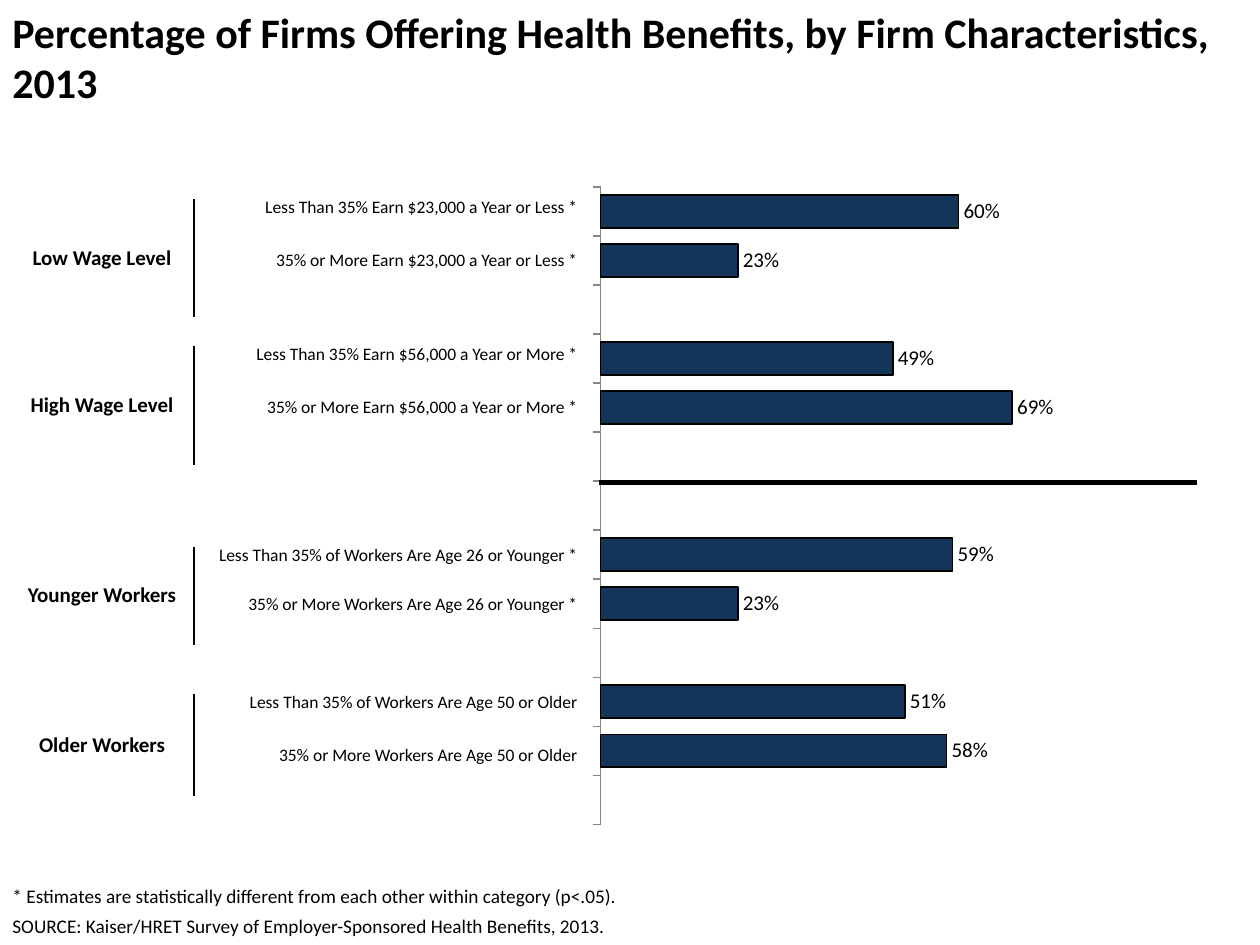
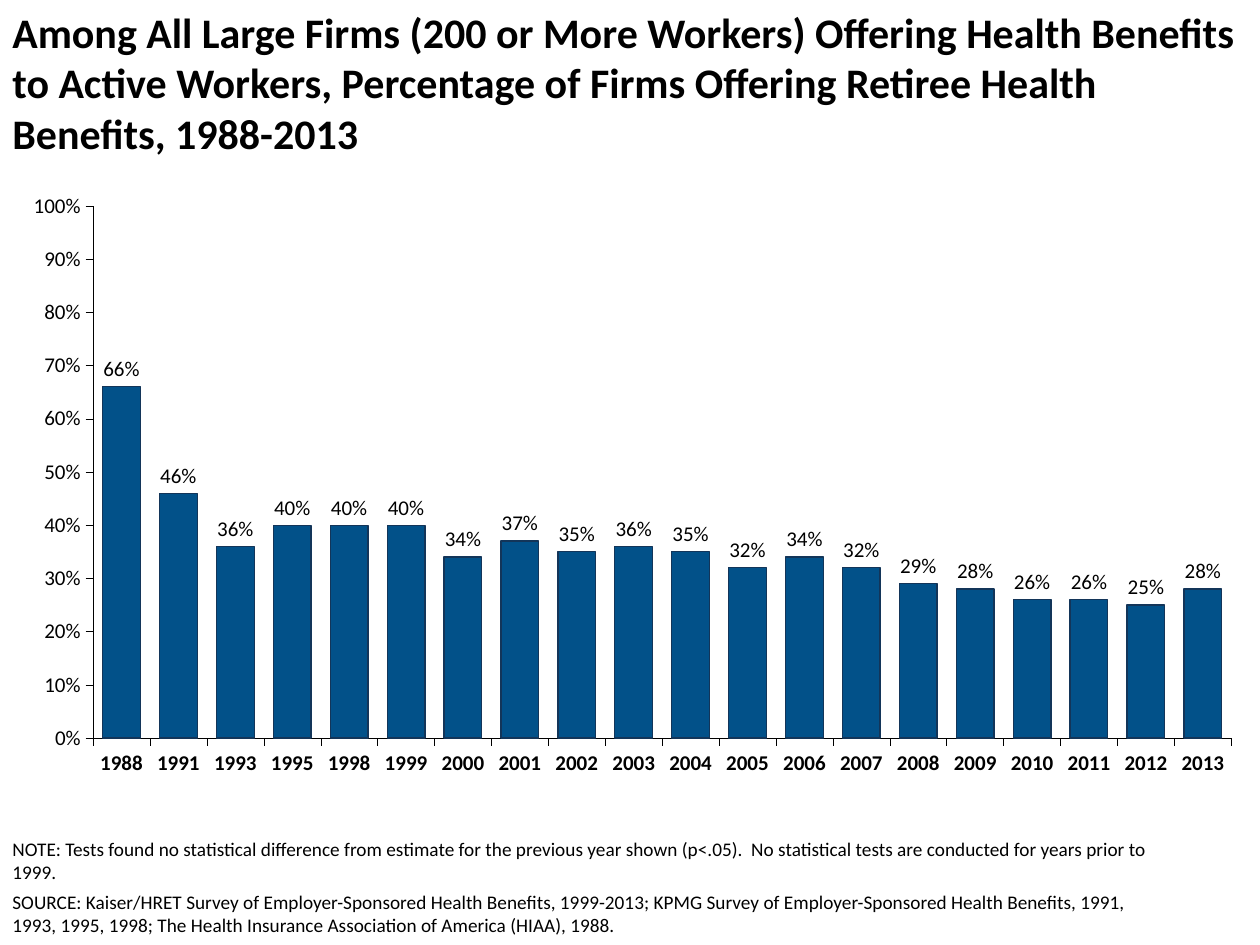
import pptx
import pptx.util
import pptx.chart.data
import pptx.dml.color
import pptx.enum.chart
import pptx.enum.shapes
import pptx.enum.text
import pptx.oxml
import pptx.oxml.ns
import lxml.etree

Inches, Pt = pptx.util.Inches, pptx.util.Pt
qn = pptx.oxml.ns.qn
XL = pptx.enum.chart
ALIGN = pptx.enum.text.PP_ALIGN
ANCHOR = pptx.enum.text.MSO_ANCHOR

COLORS = {"text": "000000", "navy": "133559", "blue": "025189", "axis": "868686"}
FONT = "Calibri"
NO_STYLE_NO_GRID = "{2D5ABB26-0587-4C30-8999-92F81FD0307C}"

# Each group: label, the two statements, their values, the three row heights
FIRM_GROUPS = [
    ("Low Wage Level",
     [("Less Than 35% Earn $23,000 a Year or Less *", 0.60),
      ("35% or More Earn $23,000 a Year or Less *", 0.23)], (0.42, 0.52, 0.23)),
    ("High Wage Level",
     [("Less Than 35% Earn $56,000 a Year or More *", 0.49),
      ("35% or More Earn $56,000 a Year or More *", 0.69)], (0.42, 0.52, 0.65)),
    ("Younger Workers",
     [("Less Than 35% of Workers Are Age 26 or Younger *", 0.59),
      ("35% or More Workers Are Age 26 or Younger *", 0.23)], (0.39, 0.39, 0.39)),
    ("Older Workers",
     [("Less Than 35% of Workers Are Age 50 or Older", 0.51),
      ("35% or More Workers Are Age 50 or Older", 0.58)], (0.42, 0.39, 0.38)),
]
WAGE_GROUPS = 2  # groups above the dividing line

RETIREE_OFFERS = {
    1988: 0.66, 1991: 0.46, 1993: 0.36, 1995: 0.40, 1998: 0.40, 1999: 0.40, 2000: 0.34,
    2001: 0.37, 2002: 0.35, 2003: 0.36, 2004: 0.35, 2005: 0.32, 2006: 0.34, 2007: 0.32,
    2008: 0.29, 2009: 0.28, 2010: 0.26, 2011: 0.26, 2012: 0.25, 2013: 0.28,
}


def rgb(name):
    return pptx.dml.color.RGBColor.from_string(COLORS[name])


def inches(box):
    return [Inches(v) for v in box]


def set_font(font, size, bold=False):
    font.name, font.size, font.bold = FONT, Pt(size), bold
    font.color.rgb = rgb("text")


def set_line(line, color, width):
    line.color.rgb = rgb(color)
    line.width = Pt(width)


def add_run(p, text, size, bold=False):
    r = p.add_run()
    r.text = text
    set_font(r.font, size, bold)


def add_text(s, box, paragraphs, size, bold=False, anchor=ANCHOR.TOP):
    tf = s.shapes.add_textbox(*inches(box)).text_frame
    tf.word_wrap = True
    tf.vertical_anchor = anchor
    for i, text in enumerate(paragraphs):
        p = tf.add_paragraph() if i else tf.paragraphs[0]
        if i:
            p.space_before = Pt(4)
        add_run(p, text, size, bold)


def add_title(s, text, box):
    add_text(s, box, [text], 24, bold=True)


def add_footer(s, box, paragraphs):
    add_text(s, box, paragraphs, 11, anchor=ANCHOR.BOTTOM)


# Charts
def set_plot_layout(chart, x, y, w, h):
    plot_area = chart._chartSpace.chart.plotArea
    for old in plot_area.findall(qn("c:layout")):
        plot_area.remove(old)
    layout = lxml.etree.Element(qn("c:layout"))
    manual = lxml.etree.SubElement(layout, qn("c:manualLayout"))
    settings = {"layoutTarget": "inner", "xMode": "edge", "yMode": "edge",
                "x": x, "y": y, "w": w, "h": h}
    for tag, value in settings.items():
        lxml.etree.SubElement(manual, qn("c:" + tag)).set("val", str(value))
    plot_area.insert(0, layout)


def add_percent_chart(s, kind, box, layout, cats, values, gap, color, outline):
    data = pptx.chart.data.CategoryChartData(number_format="0%")
    data.categories = [str(c) for c in cats]
    data.add_series("Series 1", values)
    chart = s.shapes.add_chart(kind, *inches(box), data).chart
    chart.has_legend = chart.has_title = False
    set_font(chart.font, 12)
    set_plot_layout(chart, *layout)

    axis = chart.value_axis
    axis.minimum_scale, axis.maximum_scale, axis.major_unit = 0, 1, 0.1
    axis.has_major_gridlines = False
    axis.tick_labels.number_format = "0%"
    axis.tick_labels.number_format_is_linked = False

    plot = chart.plots[0]
    plot.gap_width, plot.vary_by_categories = gap, False
    plot.has_data_labels = True
    labels = plot.data_labels
    labels.show_value = True
    labels.position = XL.XL_LABEL_POSITION.OUTSIDE_END
    labels.number_format, labels.number_format_is_linked = "0%", False
    set_font(labels.font, 12)

    bars = plot.series[0].format
    bars.fill.solid()
    bars.fill.fore_color.rgb = rgb(color)
    set_line(bars.line, *outline)
    for ax in (chart.category_axis, axis):
        ax.major_tick_mark = XL.XL_TICK_MARK.OUTSIDE
        ax.minor_tick_mark = XL.XL_TICK_MARK.NONE
    return chart


def add_firm_chart(s, box):
    values = []
    for i, (_, statements, _) in enumerate(FIRM_GROUPS):
        if i == WAGE_GROUPS:
            values.append(None)
        values += [value for _, value in statements] + [None]
    chart = add_percent_chart(
        s, XL.XL_CHART_TYPE.BAR_CLUSTERED, box, (0.247, 0.029, 0.67, 0.949),
        range(1, len(values) + 1), values, 50, "navy", ("text", 1))
    chart.value_axis.visible = False
    axis = chart.category_axis
    axis.reverse_order = True
    axis.tick_label_position = XL.XL_TICK_LABEL_POSITION.NONE
    set_line(axis.format.line, "axis", 0.75)


def add_retiree_chart(s, box):
    chart = add_percent_chart(
        s, XL.XL_CHART_TYPE.COLUMN_CLUSTERED, box, (0.067, 0.028, 0.919, 0.882),
        RETIREE_OFFERS, list(RETIREE_OFFERS.values()), 51, "blue", ("navy", 0.75))
    chart.plots[0].overlap = 1
    for axis, bold in ((chart.category_axis, True), (chart.value_axis, False)):
        set_font(axis.tick_labels.font, 12, bold)
        set_line(axis.format.line, "text", 0.23)


# Table of firm groups
def add_cell_border(cell, side):
    ln = lxml.etree.Element(qn("a:ln" + side), w=str(Pt(1)))
    fill = lxml.etree.SubElement(ln, qn("a:solidFill"))
    lxml.etree.SubElement(fill, qn("a:srgbClr")).set("val", COLORS["text"])
    cell._tc.get_or_add_tcPr().insert(0, ln)


def set_margins(cell, side, top):
    cell.margin_left = cell.margin_right = Inches(side)
    cell.margin_top = cell.margin_bottom = Inches(top)


def add_group_table(s, box):
    rows = [h for *_, heights in FIRM_GROUPS for h in heights]
    table = s.shapes.add_table(len(rows), 2, *inches(box)).table
    table.first_row = table.horz_banding = False
    table._tbl.tblPr.find(qn("a:tableStyleId")).text = NO_STYLE_NO_GRID
    for column, width in zip(table.columns, (1.46, box[2] - 1.46)):
        column.width = Inches(width)
    for row, height in zip(table.rows, rows):
        row.height = Inches(height)
    for cell in table.iter_cells():
        set_margins(cell, 0, 0)
        cell.fill.background()
        # Small text size keeps the empty rows low
        cell.text_frame.paragraphs[0]._p.get_or_add_endParaRPr().set("sz", "1000")

    for i, (label, statements, _) in enumerate(FIRM_GROUPS):
        top = 3 * i
        head = table.cell(top, 0)
        head.merge(table.cell(top + 1, 0))
        set_margins(head, 0.07, 0.03)
        head.vertical_anchor = ANCHOR.MIDDLE
        p = head.text_frame.paragraphs[0]
        p.alignment = ALIGN.CENTER
        add_run(p, label, 12, bold=True)
        for j, (statement, _) in enumerate(statements):
            cell = table.cell(top + j, 1)
            add_cell_border(table.cell(top + j, 0), "R")
            add_cell_border(cell, "L")
            p = cell.text_frame.paragraphs[0]
            p.alignment = ALIGN.RIGHT
            p.line_spacing = 0.85
            add_run(p, statement, 10)


def add_divider(s, x1, x2, y):
    line = s.shapes.add_connector(pptx.enum.shapes.MSO_CONNECTOR.STRAIGHT,
                                  *inches((x1, y, x2, y)))
    set_line(line.line, "text", 2.5)
    lxml.etree.SubElement(line._element.spPr, qn("a:effectLst"))


# Slides
def build_firm_slide(s):
    add_firm_chart(s, (3.02, 1.33, 7.07, 5.33))
    add_footer(s, (0, 6.91, 9.25, 0.58), [
        "* Estimates are statistically different from each other within category (p<.05).",
        "SOURCE: Kaiser/HRET Survey of Employer-Sponsored Health Benefits, 2013."])
    add_title(s, "Percentage of Firms Offering Health Benefits, by Firm Characteristics, 2013",
              (0, 0, 9.8, 1))
    add_group_table(s, (0.08, 1.58, 4.5, 5.1))
    add_divider(s, 4.75, 9.5, 3.83)


def build_retiree_slide(s):
    add_title(s, "Among All Large Firms (200 or More Workers) Offering Health Benefits to "
              "Active Workers, Percentage of Firms Offering Retiree Health Benefits, 1988-2013",
              (0, 0, 10, 1.08))
    add_retiree_chart(s, (0.08, 1.5, 9.83, 4.79))
    add_footer(s, (0, 6.58, 9.25, 0.9), [
        "NOTE: Tests found no statistical difference from estimate for the previous year "
        "shown (p<.05).  No statistical tests are conducted for years prior to 1999.",
        "SOURCE: Kaiser/HRET Survey of Employer-Sponsored Health Benefits, 1999-2013; "
        "KPMG Survey of Employer-Sponsored Health Benefits, 1991, 1993, 1995, 1998; "
        "The Health Insurance Association of America (HIAA), 1988."])


def main():
    prs = pptx.Presentation()
    prs.slide_width, prs.slide_height = Inches(10), Inches(7.5)
    for build in (build_firm_slide, build_retiree_slide):
        build(prs.slides.add_slide(prs.slide_layouts[6]))
    prs.save("out.pptx")


if __name__ == "__main__":
    main()
